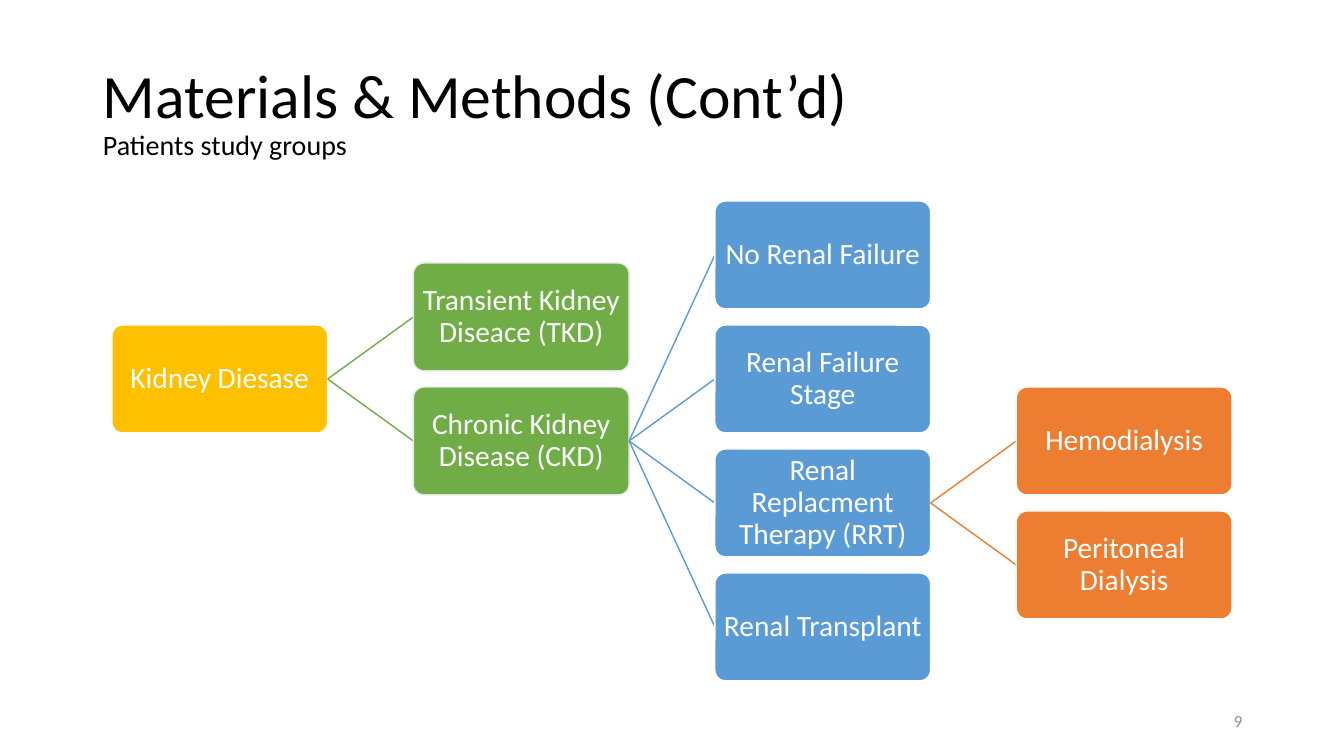
from lxml import etree
from pptx import Presentation
from pptx.dml.color import RGBColor
from pptx.enum.shapes import MSO_CONNECTOR, MSO_SHAPE
from pptx.enum.text import MSO_ANCHOR, MSO_AUTO_SIZE, PP_ALIGN
from pptx.oxml.ns import qn
from pptx.util import Inches, Pt

ROUNDED = MSO_SHAPE.ROUNDED_RECTANGLE
STRAIGHT = MSO_CONNECTOR.STRAIGHT
MIDDLE = MSO_ANCHOR.MIDDLE
NO_AUTOFIT = MSO_AUTO_SIZE.NONE
LEFT, CENTER, RIGHT = PP_ALIGN.LEFT, PP_ALIGN.CENTER, PP_ALIGN.RIGHT

FONT = "Calibri"
COLORS = {
    "black": "000000",
    "white": "FFFFFF",
    "grey": "8C8C8C",
    "pale": "E7E7E7",
    "gold": "FFC000",
    "green": "70AD47",
    "blue": "5B9BD5",
    "orange": "ED7D31",
}

# Fill and outline of each tree level
LEVELS = [("gold", "white"), ("green", "pale"), ("blue", "white"), ("orange", "white")]

# Node sizes and the distances from one node to the next, in inches
NODE_W, NODE_H = 2.14, 1.07
COLUMN_STEP, ROW_STEP = 2.99, 1.23

# Each node is a label and its children
STUDY_GROUPS = ("Kidney Diesase", [
    ("Transient Kidney Diseace (TKD)", []),
    ("Chronic Kidney Disease (CKD)", [
        ("No Renal Failure", []),
        ("Renal Failure Stage", []),
        ("Renal Replacment Therapy (RRT)", [
            ("Hemodialysis", []),
            ("Peritoneal Dialysis", []),
        ]),
        ("Renal Transplant", []),
    ]),
])


def color(name):
    return RGBColor.from_string(COLORS[name])


def format_para(para, size, color_name, align):
    para.alignment = align
    para.font.name = FONT
    para.font.size = Pt(size)
    para.font.color.rgb = color(color_name)


def add_title(page, left, top, width, height):
    title = page.shapes.title
    title.left, title.top = Inches(left), Inches(top)
    title.width, title.height = Inches(width), Inches(height)
    frame = title.text_frame
    frame.auto_size = NO_AUTOFIT
    frame.word_wrap = True
    frame.vertical_anchor = MIDDLE
    para = frame.paragraphs[0]
    format_para(para, 44, "black", LEFT)
    para.line_spacing = 0.9
    para.add_run().text = "Materials & Methods (Cont’d)"
    para.add_line_break()
    subtitle = para.add_run()
    subtitle.text = "Patients study groups"
    subtitle.font.size = Pt(20)


def add_page_number(page, left, top, width, height):
    box = page.shapes.add_textbox(Inches(left), Inches(top), Inches(width), Inches(height))
    frame = box.text_frame
    frame.word_wrap = True
    frame.vertical_anchor = MIDDLE
    frame.text = "9"
    format_para(frame.paragraphs[0], 12, "grey", RIGHT)


def add_branch(page, start, end, color_name):
    x1, y1, x2, y2 = (Inches(length) for length in (*start, *end))
    branch = page.shapes.add_connector(STRAIGHT, x1, y1, x2, y2)
    branch.line.color.rgb = color(color_name)
    branch.line.width = Pt(1)
    etree.SubElement(branch._element.spPr, qn("a:effectLst"))


def add_node(page, label, left, middle, level):
    fill, outline = LEVELS[level]
    node = page.shapes.add_shape(ROUNDED, Inches(left), Inches(middle - NODE_H / 2),
                                 Inches(NODE_W), Inches(NODE_H))
    node.adjustments[0] = 0.1
    node.shadow.inherit = False
    node.fill.solid()
    node.fill.fore_color.rgb = color(fill)
    node.line.color.rgb = color(outline)
    node.line.width = Pt(1)
    frame = node.text_frame
    frame.word_wrap = True
    frame.vertical_anchor = MIDDLE
    frame.margin_left = frame.margin_right = Inches(0.01)
    frame.margin_top = frame.margin_bottom = Inches(0.01)
    frame.text = label
    para = frame.paragraphs[0]
    format_para(para, 21, "white", CENTER)
    para.line_spacing = 0.9


def add_tree(page, tree, left, middle, level=0):
    """Draw a node, then its children centred on it one column to the right."""
    label, children = tree
    add_node(page, label, left, middle, level)
    child_left = left + COLUMN_STEP
    first_middle = middle - ROW_STEP * (len(children) - 1) / 2
    for row, child in enumerate(children):
        child_middle = first_middle + row * ROW_STEP
        add_branch(page, (left + NODE_W, middle), (child_left, child_middle),
                   LEVELS[level + 1][0])
        add_tree(page, child, child_left, child_middle, level + 1)


def main():
    deck = Presentation()
    deck.slide_width, deck.slide_height = Inches(13.33), Inches(7.5)
    page = deck.slides.add_slide(deck.slide_layouts[5])
    add_title(page, 0.92, 0.4, 11.5, 1.45)
    add_tree(page, STUDY_GROUPS, 1.11, 3.76)
    add_page_number(page, 9.42, 6.95, 3, 0.4)
    deck.save("out.pptx")


if __name__ == "__main__":
    main()
